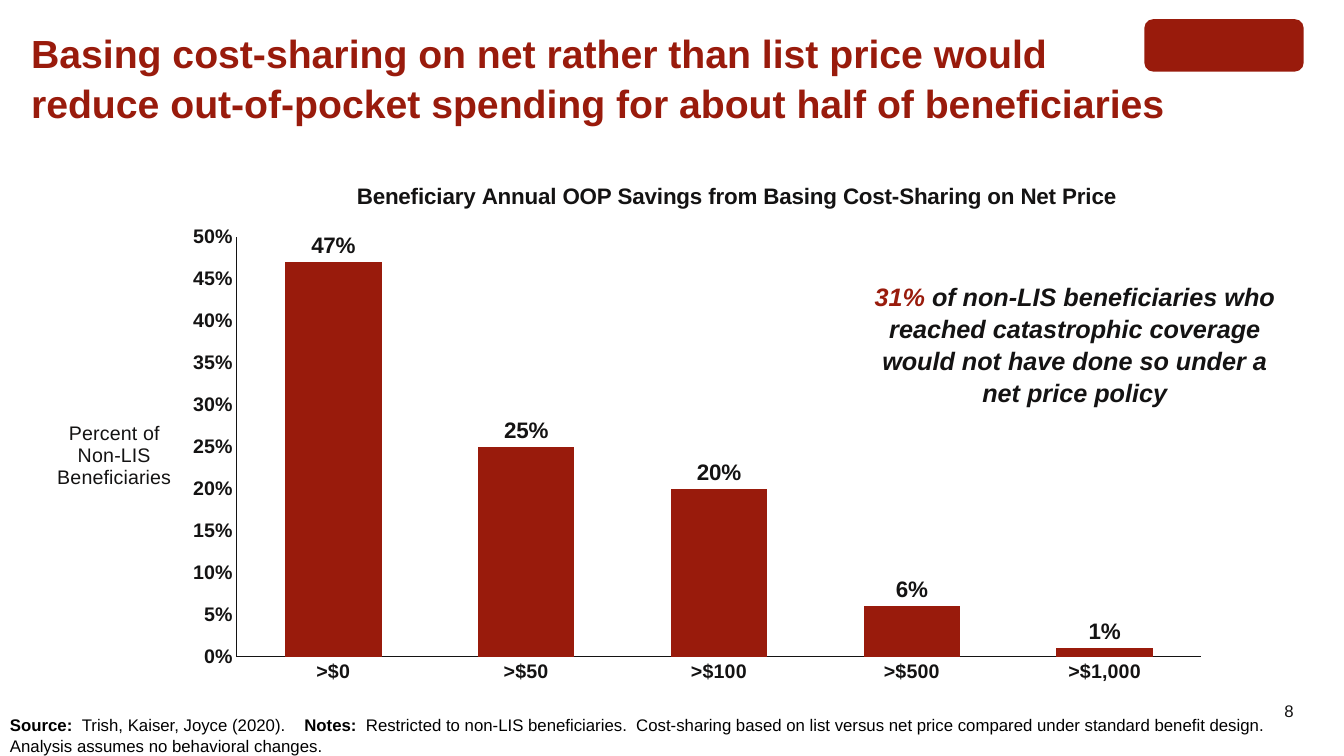
from lxml import etree
from pptx import Presentation
from pptx.chart.data import CategoryChartData
from pptx.dml.color import RGBColor
from pptx.enum import chart as ch, shapes, text
from pptx.oxml import parse_xml
from pptx.oxml.ns import nsdecls, qn
from pptx.util import Inches, Pt

RED = RGBColor(0x99, 0x1B, 0x0C)
INK = RGBColor(0x14, 0x13, 0x13)
BLACK = RGBColor(0, 0, 0)
FONT = "Arial"
LINE_SPACING = 1.05


def style(font, size, color, bold=False, italic=False):
    font.name, font.size, font.bold, font.italic = FONT, Pt(size), bold, italic
    font.color.rgb = color


def add_words(slide, box, runs, align=text.PP_ALIGN.LEFT, inset=None):
    """Place one paragraph; each run is (words, size, color, bold, italic)."""
    frame = slide.shapes.add_textbox(*map(Inches, box)).text_frame
    frame.word_wrap = True
    if inset is not None:
        frame.margin_left = frame.margin_right = Inches(inset)
        frame.margin_top = frame.margin_bottom = Inches(inset)
    paragraph = frame.paragraphs[0]
    paragraph.alignment = align
    paragraph.line_spacing = LINE_SPACING
    paragraph.text = ""
    for words, *look in runs:
        run = paragraph.add_run()
        run.text = words
        style(run.font, *look)
    return paragraph


def add_header(slide, box):
    left, top, width, height = box
    badge = slide.shapes.add_shape(
        shapes.MSO_SHAPE.ROUNDED_RECTANGLE,
        Inches(left + 11.14), Inches(top - 0.03), Inches(1.58), Inches(0.52))
    badge.shadow.inherit = False
    badge.fill.solid()
    badge.fill.fore_color.rgb = RED
    badge.line.fill.background()

    headline = add_words(slide, box, [])
    headline.text = ("Basing cost-sharing on net rather than list price would\v"
                     "reduce out-of-pocket spending for about half of beneficiaries")
    for run in headline.runs:
        style(run.font, 28, RED, True)


def manual_layout(x, y, w=None, h=None):
    """Layout element in fractions of the chart area."""
    inner = '<c:layoutTarget val="inner"/>' if w else ""
    size = f'<c:w val="{w}"/><c:h val="{h}"/>' if w else ""
    return parse_xml(
        f'<c:layout {nsdecls("c")}><c:manualLayout>{inner}'
        f'<c:xMode val="edge"/><c:yMode val="edge"/>'
        f'<c:x val="{x}"/><c:y val="{y}"/>{size}</c:manualLayout></c:layout>')


def set_title(title, lines, size, bold, x, y):
    frame = title.text_frame
    frame.text = "\n".join(lines)
    for paragraph in frame.paragraphs:
        paragraph.alignment = text.PP_ALIGN.CENTER
        for run in paragraph.runs:
            style(run.font, size, INK, bold)
    element = title._element
    for old in element.findall(qn("c:layout")):
        element.remove(old)
    element.find(qn("c:tx")).addnext(manual_layout(x, y))
    body = element.find(".//" + qn("a:bodyPr"))
    body.set("rot", "0")
    body.set("vert", "horz")


def style_axis(axis):
    axis.has_major_gridlines = False
    axis.major_tick_mark = axis.minor_tick_mark = ch.XL_TICK_MARK.NONE
    axis.format.line.color.rgb = INK
    axis.format.line.width = Pt(0.75)
    style(axis.tick_labels.font, 14, INK, True)


def add_savings_chart(slide, box):
    savings = CategoryChartData(number_format="0%")
    savings.categories = [">$0", ">$50", ">$100", ">$500", ">$1,000"]
    savings.add_series("Series 1", [0.47, 0.25, 0.2, 0.06, 0.01])
    chart = slide.shapes.add_chart(
        ch.XL_CHART_TYPE.COLUMN_CLUSTERED, *map(Inches, box), savings).chart
    style(chart.font, 10, INK)
    chart.has_legend = False
    chart.has_title = True
    set_title(chart.chart_title,
              ["Beneficiary Annual OOP Savings from Basing Cost-Sharing on Net Price"],
              16, True, 0.27, 0.03)

    percent = chart.value_axis
    for axis in (chart.category_axis, percent):
        style_axis(axis)
    percent.minimum_scale, percent.maximum_scale, percent.major_unit = 0, 0.5, 0.05
    percent.tick_labels.number_format = "0%"
    percent.tick_labels.number_format_is_linked = False
    percent.has_title = True
    set_title(percent.axis_title, ["Percent of", "Non-LIS", "Beneficiaries"],
              14, False, 0.02, 0.48)

    plot = chart.plots[0]
    plot.gap_width, plot.overlap, plot.vary_by_categories = 100, -27, False
    bars = plot.series[0]
    bars.format.fill.solid()
    bars.format.fill.fore_color.rgb = RED
    labels = bars.data_labels
    labels.show_value = True
    labels.number_format, labels.number_format_is_linked = "0%", False
    labels.position = ch.XL_LABEL_POSITION.OUTSIDE_END
    style(labels.font, 16, INK, True)

    area = plot._element.getparent()
    for old in area.findall(qn("c:layout")):
        area.remove(old)
    area.insert(0, manual_layout(0.173, 0.14, 0.807, 0.789))


def add_callout(slide, box):
    add_words(slide, box, [
        ("31% ", 18, RED, True, True),
        ("of non-LIS beneficiaries who reached catastrophic coverage "
         "would not have done so under a net price policy", 18, INK, True, True),
    ], text.PP_ALIGN.CENTER)


def add_footer(slide, box):
    left, top, width, height = box
    source = add_words(slide, box, [
        ("Source:  ", 12, BLACK, True),
        ("Trish, Kaiser, Joyce (2020).\t", 12, BLACK),
        ("Notes:  ", 12, BLACK, True),
        ("Restricted to non-LIS beneficiaries.  Cost-sharing based on list versus "
         "net price compared under standard benefit design.  "
         "Analysis assumes no behavioral changes.", 12, BLACK),
    ])
    tabs = etree.SubElement(source._p.get_or_add_pPr(), qn("a:tabLst"))
    etree.SubElement(tabs, qn("a:tab"), pos=str(Inches(2.92)), algn="l")
    add_words(slide, (left + 12.06, top - 0.09, 0.77, 0.2),
              [("8", 12, INK)], text.PP_ALIGN.RIGHT, inset=0)


def main():
    deck = Presentation()
    deck.slide_width, deck.slide_height = Inches(13.33), Inches(7.5)
    slide = deck.slides.add_slide(deck.slide_layouts[6])
    add_header(slide, (0.21, 0.22, 12.42, 0.49))
    add_savings_chart(slide, (0.3, 1.61, 11.85, 5.28))
    add_callout(slide, (8.52, 2.73, 4.28, 1.31))
    add_footer(slide, (0, 7.03, 13.09, 0.28))
    deck.save("out.pptx")


if __name__ == "__main__":
    main()
